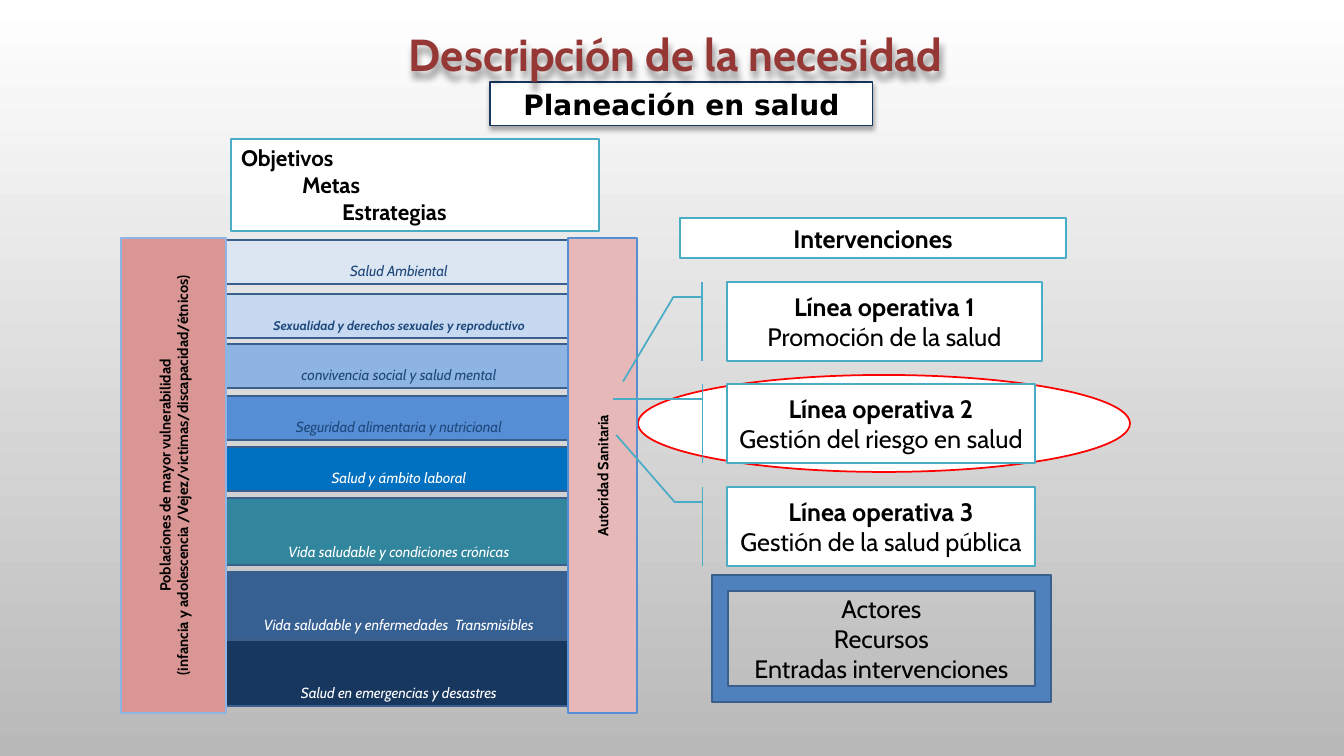
import pptx
import pptx.util
import pptx.dml.color
import pptx.enum.shapes
import pptx.enum.text
import pptx.oxml.ns
import lxml.etree

PX = 12192000 / 1344
THEME = {
    "font": "Cabin", "heading_font": "DejaVu Sans", "line": 1.25, "thin": 0.75,
    "title": 32, "heading": 20, "body": 18, "list": 16, "label": 10.5, "small": 9,
    "white": "FFFFFF", "gray": "B9B9B9", "black": "000000", "navy": "1F497D",
    "deep": "17375E", "edge": "3A5F8C", "teal": "4BACC6", "red": "FF0000",
    "maroon": "953735", "brick": "C0504D", "frame": "4F81BD",
    "rose": "D99694", "pink": "E6B9B8", "sky": "8EB4E3", "blue": "558ED5",
    "bands": ["DCE6F2", "C6D9F1", "8EB4E3", "558ED5",
              "0070C0", "31859C", "376092", "17375E"],
}
SHAPE = pptx.enum.shapes.MSO_SHAPE
ANCHOR = pptx.enum.text.MSO_ANCHOR
ALIGN = pptx.enum.text.PP_ALIGN
RGB = pptx.dml.color.RGBColor.from_string
qn = pptx.oxml.ns.qn


def style(sp, at, fill=None, line=None, width=THEME["line"], shadow=None):
    for key, value in zip(("left", "top", "width", "height"), at):
        setattr(sp, key, round(value * PX))
    for part, color in ((sp.fill, fill), (sp.line.fill, line)):
        if color:
            part.solid()
            part.fore_color.rgb = RGB(color)
        else:
            part.background()
    if line:
        sp.line.width = pptx.util.Pt(width)
    sp.shadow.inherit = False
    if shadow:
        alpha, blur, dist = shadow
        effects = sp._element.spPr.find(qn("a:effectLst"))
        outer = lxml.etree.SubElement(
            effects, qn("a:outerShdw"), blurRad=str(pptx.util.Pt(blur)),
            dist=str(pptx.util.Pt(dist)), dir="5400000", rotWithShape="0")
        color = lxml.etree.SubElement(outer, qn("a:srgbClr"), val=THEME["black"])
        lxml.etree.SubElement(color, qn("a:alpha"), val=str(alpha * 1000))
    return sp


def write(sp, lines, size, color=THEME["black"], name=THEME["font"],
          anchor=ANCHOR.MIDDLE, align=ALIGN.CENTER, italic=False, vert=None):
    tf = sp.text_frame
    frame = {"word_wrap": True, "vertical_anchor": anchor,
             "auto_size": pptx.enum.text.MSO_AUTO_SIZE.NONE,
             "margin_left": round(10 * PX), "margin_right": round(10 * PX),
             "margin_top": round(5 * PX), "margin_bottom": round(5 * PX)}
    for key, value in frame.items():
        setattr(tf, key, value)
    if vert:
        tf._txBody.bodyPr.set("vert", vert)
    for i, (text, bold) in enumerate(lines):
        p = tf.paragraphs[0] if i == 0 else tf.add_paragraph()
        p.alignment = align
        r = p.add_run()
        r.text = text
        fmt = {"name": name, "size": pptx.util.Pt(size), "bold": bold, "italic": italic}
        for key, value in fmt.items():
            setattr(r.font, key, value)
        r.font.color.rgb = RGB(color)
    return tf


prs = pptx.Presentation()
prs.slide_width = round(1344 * PX)
prs.slide_height = round(756 * PX)
s = prs.slides.add_slide(prs.slide_layouts[1])
shapes = s.shapes

bg = s.background.fill
bg.gradient()
bg.gradient_angle = 270
for stop, position, color in zip(bg.gradient_stops, (0, 1), ("white", "gray")):
    stop.position = position
    stop.color.rgb = RGB(THEME[color])

goals = style(s.placeholders[1], (231, 139, 368, 92), THEME["white"], THEME["teal"])
tf = write(goals, [("Objetivos", True), ("Metas", True), ("Estrategias", True)],
           THEME["list"], anchor=ANCHOR.TOP, align=ALIGN.LEFT)
for p, indent in zip(tf.paragraphs, (0, 61, 101)):
    p.space_before = pptx.util.Pt(0)
    pPr = p._p.get_or_add_pPr()
    pPr.set("marL", str(round(indent * PX)))
    pPr.set("indent", "0")
    lxml.etree.SubElement(pPr, qn("a:buNone"))

style(shapes.add_shape(SHAPE.OVAL, 0, 0, 0, 0), (638, 375, 492, 97),
      THEME["white"], THEME["red"])

bands = [
    (240, 44, "Salud Ambiental"),
    (294, 44, "Sexualidad y derechos sexuales y reproductivo"),
    (344, 44, "convivencia social y salud mental"),
    (396, 44, "Seguridad alimentaria y nutricional"),
    (447, 44, "Salud y ámbito laboral"),
    (498, 67, "Vida saludable y condiciones crónicas"),
    (572, 67, "Vida saludable y enfermedades  Transmisibles"),
    (640, 66, "Salud en emergencias y desastres"),
]
for i, (top, height, text) in enumerate(bands):
    sp = style(shapes.add_shape(SHAPE.RECTANGLE, 0, 0, 0, 0), (223, top, 352, height),
               THEME["bands"][i], THEME["edge"])
    write(sp, [(text, i == 1)], THEME["small" if i == 1 else "label"],
          THEME["navy" if i < 4 else "white"], anchor=ANCHOR.BOTTOM, italic=True)

columns = [
    (121, 105, "rose", "sky",
     ["Poblaciones de mayor vulnerabilidad",
      "(infancia y adolescencia /Vejez/victimas/discapacidad/étnicos)"]),
    (568, 69, "pink", "blue", ["Autoridad Sanitaria"]),
]
for left, width, fill, line, texts in columns:
    sp = style(shapes.add_shape(SHAPE.RECTANGLE, 0, 0, 0, 0), (left, 238, width, 475),
               THEME[fill], THEME[line])
    write(sp, [(text, True) for text in texts], THEME["label"], vert="vert270")

operations = [
    (282, 315, 1.26, -0.33, "Promoción de la salud"),
    (384, 308, 0.19, -0.37, "Gestión del riesgo en salud"),
    (487, 308, -0.66, -0.36, "Gestión de la salud pública"),
]
for i, (top, width, tip_y, tip_x, text) in enumerate(operations, 1):
    sp = shapes.add_shape(SHAPE.LINE_CALLOUT_2_BORDER_AND_ACCENT_BAR, 0, 0, 0, 0)
    for k, value in enumerate((0.19, -0.08, 0.19, -0.17, tip_y, tip_x)):
        sp.adjustments[k] = value
    style(sp, (727, top, width, 79), THEME["white"], THEME["teal"])
    write(sp, [(f"Línea operativa {i}", True), (text, False)], THEME["body"])

inputs = style(shapes.add_shape(SHAPE.FRAME, 0, 0, 0, 0), (712, 575, 339, 127),
               THEME["frame"], THEME["edge"])
write(inputs, [("Actores", False), ("Recursos", False), ("Entradas intervenciones", False)],
      THEME["body"])

interventions = style(shapes.add_shape(SHAPE.RECTANGLE, 0, 0, 0, 0), (680, 218, 386, 40),
                      THEME["white"], THEME["teal"])
write(interventions, [("Intervenciones", True)], THEME["body"])

planning = style(shapes.add_shape(SHAPE.RECTANGLE, 0, 0, 0, 0), (490, 82, 383, 44),
                 THEME["white"], THEME["deep"], THEME["thin"], (32, 3.5, 2.2))
write(planning, [("Planeación en salud", True)], THEME["heading"],
      name=THEME["heading_font"])

title = style(shapes.title, (45, 21, 1262, 65), shadow=(40, 4, 4))
tf = write(title, [("Descripción de la necesidad", True)], THEME["title"], THEME["maroon"])
rPr = tf.paragraphs[0].runs[0].font._element
ln = lxml.etree.Element(qn("a:ln"), w=str(pptx.util.Pt(1.75)))
outline = lxml.etree.SubElement(ln, qn("a:solidFill"))
lxml.etree.SubElement(outline, qn("a:srgbClr"), val=THEME["brick"])
rPr.insert(0, ln)
shapes._spTree.append(title._element)

prs.save("out.pptx")
